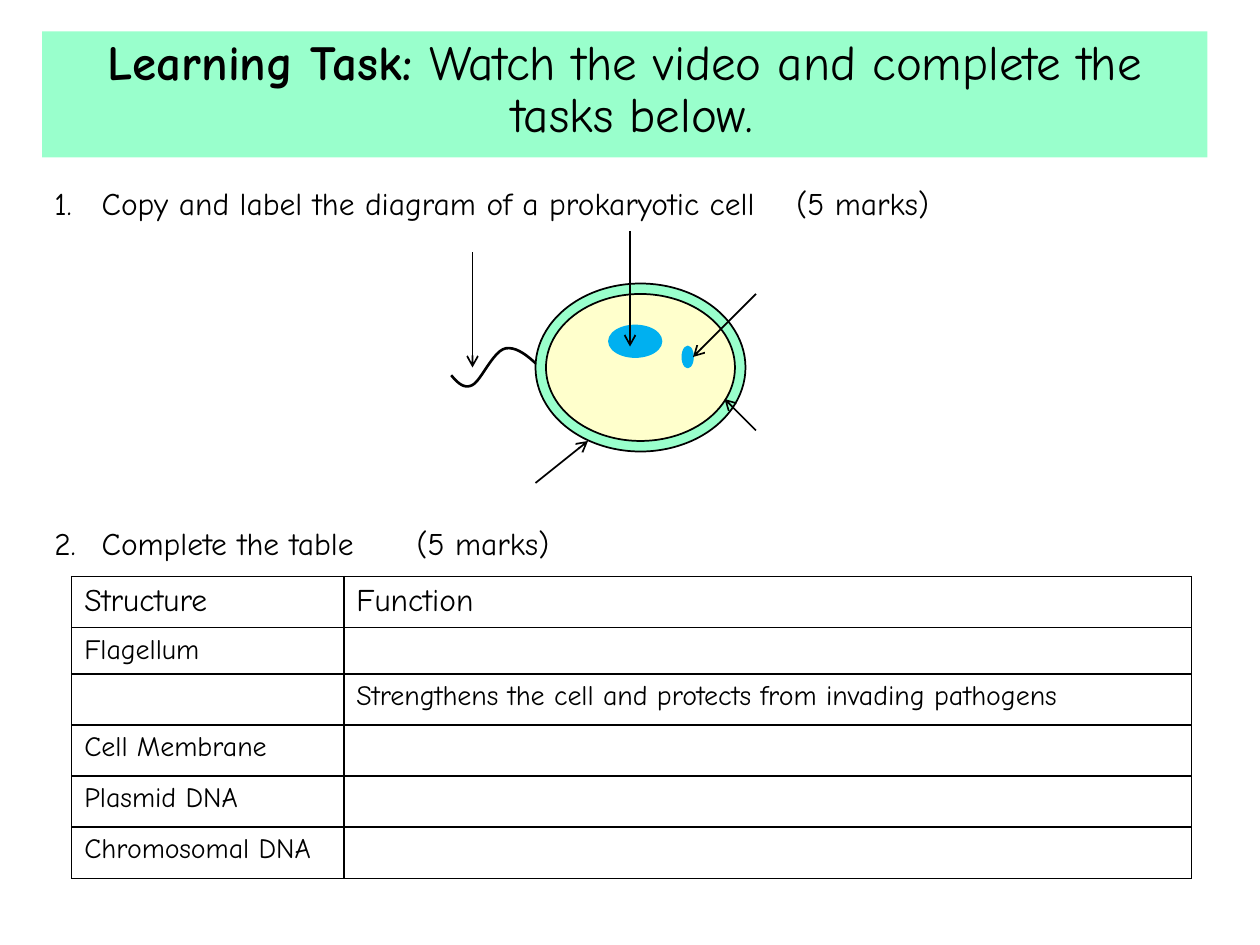
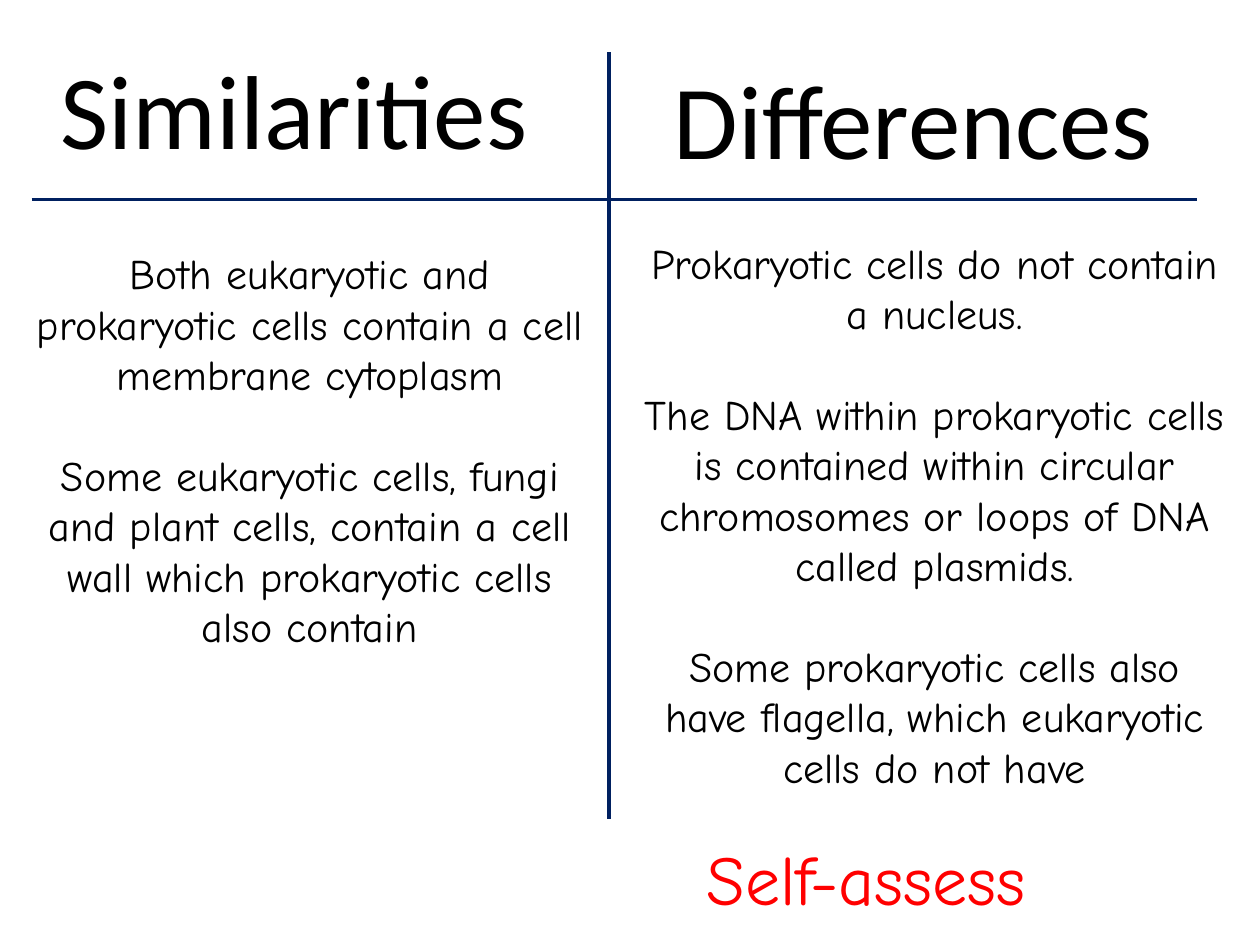
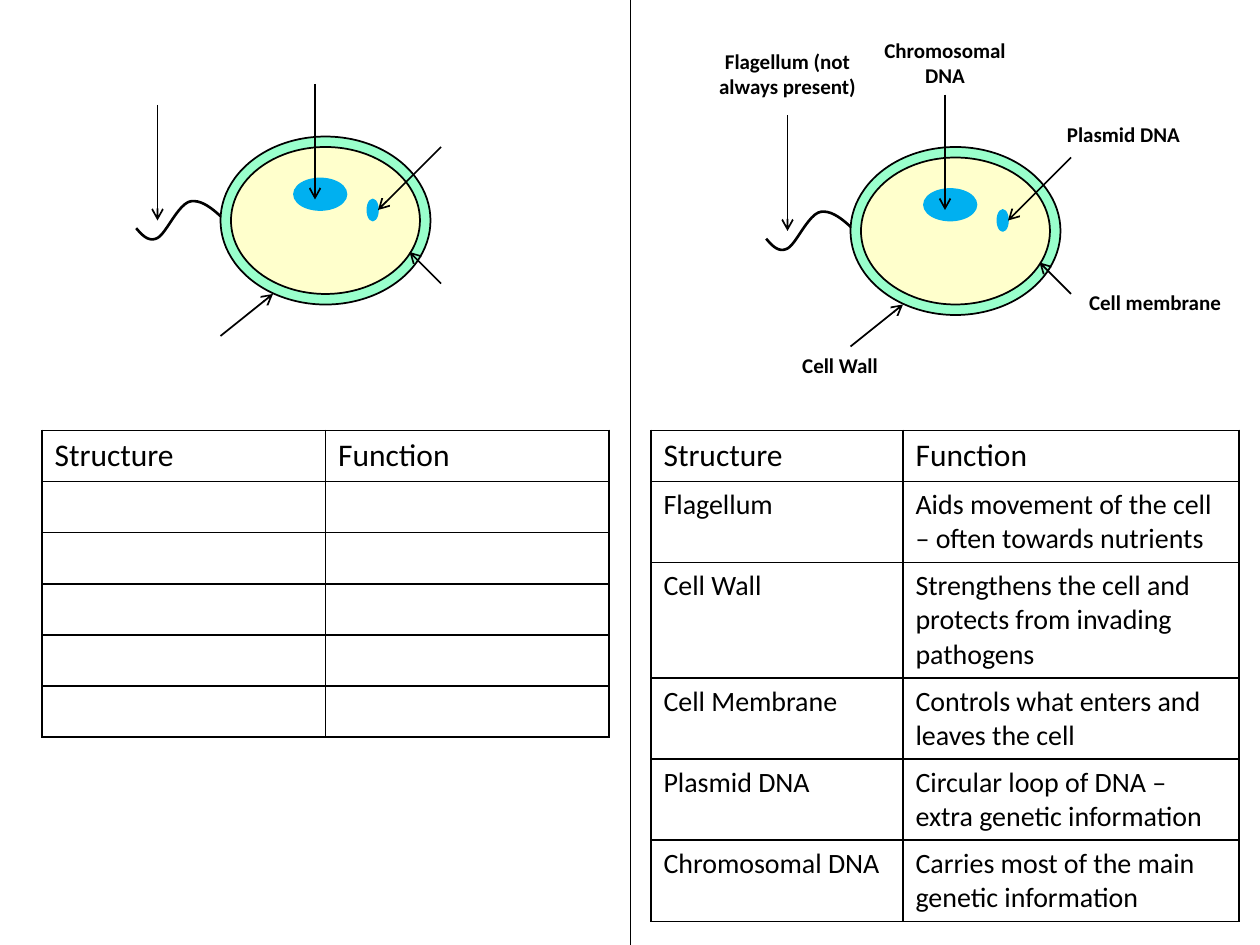
from lxml import etree
from pptx import Presentation
from pptx.dml.color import RGBColor
from pptx.enum.shapes import MSO_CONNECTOR, MSO_SHAPE
from pptx.enum.text import MSO_ANCHOR, PP_ALIGN
from pptx.oxml.ns import qn
from pptx.util import Pt

BLACK, WHITE, RED, NAVY = "000000", "FFFFFF", "FF0000", "002060"
MINT, CREAM, BLUE = "99FFCC", "FFFFCC", "00B0F0"
COMIC, CALIBRI = "Comic Neue", "Calibri"
color_of = RGBColor.from_string


def write_text(frame, *texts, font=COMIC, size=18, color=BLACK, bold=False, lead="",
               align=PP_ALIGN.LEFT, line_spacing=None, gap=0, indent=0,
               numbered=False, tabs=()):
    """Fill a frame, one paragraph per text; lead is a bold opening of the first one."""
    frame.word_wrap = True
    for index, text in enumerate(texts):
        paragraph = frame.add_paragraph() if index else frame.paragraphs[0]
        paragraph.alignment = align
        paragraph.line_spacing = line_spacing
        paragraph.space_before = Pt(gap if index else 0)
        properties = paragraph._p.get_or_add_pPr()
        if indent:
            properties.set("marL", str(Pt(indent)))
            properties.set("indent", str(-Pt(indent)))
        if numbered:
            etree.SubElement(properties, qn("a:buFont"), typeface="+mj-lt")
            etree.SubElement(properties, qn("a:buAutoNum"), type="arabicPeriod")
        if tabs:
            tab_list = etree.SubElement(properties, qn("a:tabLst"))
            etree.SubElement(tab_list, qn("a:tab"), pos=str(Pt(tabs[index])), algn="l")
        for words, is_bold in ((lead if index == 0 else "", True), (text, bold)):
            if words:
                run = paragraph.add_run()
                run.text = words
                run.font.name = font
                run.font.size = Pt(size)
                run.font.bold = is_bold
                run.font.color.rgb = color_of(color)
        if not paragraph.runs:
            etree.SubElement(paragraph._p, qn("a:endParaRPr"), sz=str(size * 100))


def add_line(slide, start, end, color=BLACK, width=1, arrow=False):
    line = slide.shapes.add_connector(
        MSO_CONNECTOR.STRAIGHT, *(Pt(value) for value in (*start, *end)))
    line.line.color.rgb = color_of(color)
    line.line.width = Pt(width)
    if arrow:
        etree.SubElement(line.line._get_or_add_ln(), qn("a:tailEnd"), type="arrow")
    etree.SubElement(line._element.spPr, qn("a:effectLst"))


presentation = Presentation()
presentation.slide_width, presentation.slide_height = Pt(720), Pt(540)
task_slide, compare_slide, answer_slide = (
    presentation.slides.add_slide(presentation.slide_layouts[6]) for _ in range(3))

# Task heading and questions
banner = task_slide.shapes.add_shape(MSO_SHAPE.RECTANGLE, Pt(24), Pt(18), Pt(666), Pt(72))
banner.shadow.inherit = False
banner.fill.solid()
banner.fill.fore_color.rgb = color_of(MINT)
banner.line.fill.background()
banner.text_frame.vertical_anchor = MSO_ANCHOR.TOP
write_text(banner.text_frame, "Watch the video and complete the tasks below. ",
           lead="Learning Task: ", size=28, align=PP_ALIGN.CENTER,
           line_spacing=0.9, indent=18)
questions = task_slide.shapes.add_textbox(Pt(24), Pt(101.5), Pt(674), Pt(247))
write_text(questions.text_frame, "Copy and label the diagram of a prokaryotic cell\t(5 marks)",
           "Complete the table\t(5 marks)", gap=172.8, indent=27, numbered=True,
           tabs=(424, 207))

# Prokaryotic cell, measured from the top left of its wall
flagellum_start = (6.3, 51.6)
flagellum_curves = [
    ((-1.6, 43.8), (-9.4, 36), (-16.8, 37)),
    ((-24, 38), (-31, 55.4), (-36, 58)),
    ((-41, 60.5), (-44.6, 56.6), (-48.2, 52.4)),
]
cell_parts = [
    (0, 0, 120, 96, MINT, BLACK),
    (6, 6, 108, 84, CREAM, BLACK),
    (42, 24, 30, 18, BLUE, BLUE),
    (84, 36, 6, 12, BLUE, BLUE),
]
label_arrows = [
    ((-36, -18), (-36, 48)),
    ((54, -30), (54, 36)),
    ((126, 6), (90, 42)),
    ((126, 84), (108, 66)),
    ((0, 114), (30, 90)),
]
CURVE_STEPS = 12
for slide, left, top in [(task_slide, 306, 162), (answer_slide, 126, 78),
                         (answer_slide, 486, 84)]:
    points = [flagellum_start]
    for first, second, end in flagellum_curves:
        start = points[-1]
        for step in range(1, CURVE_STEPS + 1):
            t = step / CURVE_STEPS
            points.append(tuple(
                (1 - t) ** 3 * a + 3 * (1 - t) ** 2 * t * b + 3 * (1 - t) * t ** 2 * c + t ** 3 * d
                for a, b, c, d in zip(start, first, second, end)))
    outline = [(Pt(left + x), Pt(top + y)) for x, y in points]
    builder = slide.shapes.build_freeform(*outline[0])
    builder.add_line_segments(outline[1:], close=False)
    flagellum = builder.convert_to_shape()
    flagellum.shadow.inherit = False
    flagellum.fill.background()
    flagellum.line.color.rgb = color_of(BLACK)
    flagellum.line.width = Pt(1.5)

    for x, y, width, height, fill, line in cell_parts:
        part = slide.shapes.add_shape(
            MSO_SHAPE.OVAL, Pt(left + x), Pt(top + y), Pt(width), Pt(height))
        part.shadow.inherit = False
        part.fill.solid()
        part.fill.fore_color.rgb = color_of(fill)
        part.line.color.rgb = color_of(line)
        part.line.width = Pt(1)
    for (x1, y1), (x2, y2) in label_arrows:
        add_line(slide, (left + x1, top + y1), (left + x2, top + y2), arrow=True)

# Structure and function tables
ROW_HEIGHT = 29.2
header = ("Structure", "Function")
task_rows = [
    header,
    ("Flagellum", ""),
    ("", "Strengthens the cell and protects from invading pathogens"),
    ("Cell Membrane", ""),
    ("Plasmid DNA", ""),
    ("Chromosomal DNA", ""),
]
answer_rows = [
    header,
    ("Flagellum", "Aids movement of the cell – often towards nutrients"),
    ("Cell Wall", "Strengthens the cell and protects from invading pathogens"),
    ("Cell Membrane", "Controls what enters and leaves the cell"),
    ("Plasmid DNA", "Circular loop of DNA – extra genetic information"),
    ("Chromosomal DNA", "Carries most of the main genetic information"),
]
empty_rows = [header] + [("", "")] * 5
for slide, left, top, widths, font, rows in [
    (task_slide, 41, 329.5, (155.5, 484.5), COMIC, task_rows),
    (answer_slide, 24, 246, (162, 162), CALIBRI, empty_rows),
    (answer_slide, 372, 246, (144, 192), CALIBRI, answer_rows),
]:
    table = slide.shapes.add_table(len(rows), 2, Pt(left), Pt(top), Pt(sum(widths)),
                                   Pt(ROW_HEIGHT * len(rows))).table
    table.first_row = table.horz_banding = False
    for column, width in zip(table.columns, widths):
        column.width = Pt(width)
    for row_index, row in enumerate(rows):
        table.rows[row_index].height = Pt(ROW_HEIGHT)
        for column_index, text in enumerate(row):
            cell = table.cell(row_index, column_index)
            write_text(cell.text_frame, text, font=font, size=16 if row_index else 18)
            for side in ("lnL", "lnR", "lnT", "lnB"):
                border = etree.SubElement(cell._tc.get_or_add_tcPr(), qn("a:" + side),
                                          w=str(Pt(1)))
                border_fill = etree.SubElement(border, qn("a:solidFill"))
                etree.SubElement(border_fill, qn("a:srgbClr"), val=BLACK)
            cell.fill.solid()
            cell.fill.fore_color.rgb = color_of(WHITE)
task_slide_table = task_slide.shapes[-1].table
task_slide_table.rows[1].height = Pt(10)

# Similarities and differences
add_line(compare_slide, (18, 114), (684, 114), color=NAVY, width=2.25)
add_line(compare_slide, (348, 30), (348, 468), color=NAVY, width=2.25)
heading_format = dict(font=CALIBRI, size=60, line_spacing=0.9)
body_format = dict(size=24, gap=28.8)
for left, top, width, height, texts, text_format in [
    (24, 30, 288, 90, ["Similarities"], dict(heading_format, indent=18)),
    (366, 36, 312, 78, ["Differences"], dict(heading_format, indent=27)),
    (12, 138, 330, 284, [
        "Both eukaryotic and prokaryotic cells contain a cell membrane cytoplasm",
        "Some eukaryotic cells, fungi and plant cells, contain a cell wall which "
        "prokaryotic cells also contain",
    ], body_format),
    (360, 132, 348, 327, [
        "Prokaryotic cells do not contain a nucleus.",
        "The DNA within prokaryotic cells is contained within circular chromosomes "
        "or loops of DNA called plasmids.",
        "Some prokaryotic cells also have flagella, which eukaryotic cells do not have",
    ], body_format),
    (366, 474, 258, 55.5, ["Self-assess"], dict(size=40, color=RED)),
]:
    box = compare_slide.shapes.add_textbox(Pt(left), Pt(top), Pt(width), Pt(height))
    write_text(box.text_frame, *texts, align=PP_ALIGN.CENTER, **text_format)

# Answer divider and labels
add_line(answer_slide, (360, 0), (360, 540), width=0.5)
for text, left, top, height in [
    ("Flagellum (not always present)", 402, 24, 36),
    ("Chromosomal DNA", 492, 18, 36),
    ("Plasmid DNA", 594, 66, 21.6),
    ("Cell membrane", 612, 162, 21.6),
    ("Cell Wall", 432, 198, 21.6),
]:
    label = answer_slide.shapes.add_textbox(Pt(left), Pt(top), Pt(96), Pt(height))
    write_text(label.text_frame, text, font=CALIBRI, size=12, bold=True,
               align=PP_ALIGN.CENTER)

presentation.save("out.pptx")
